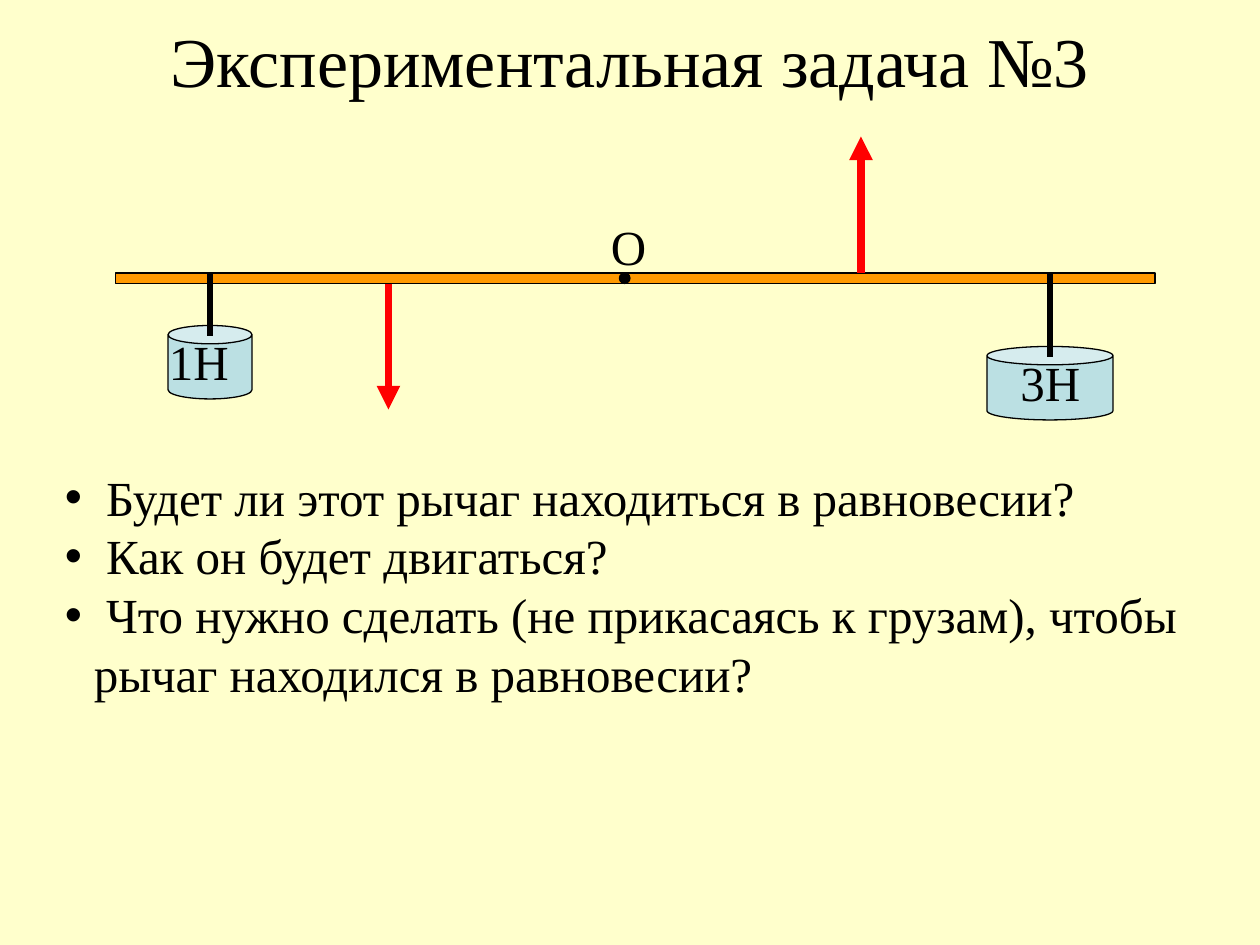
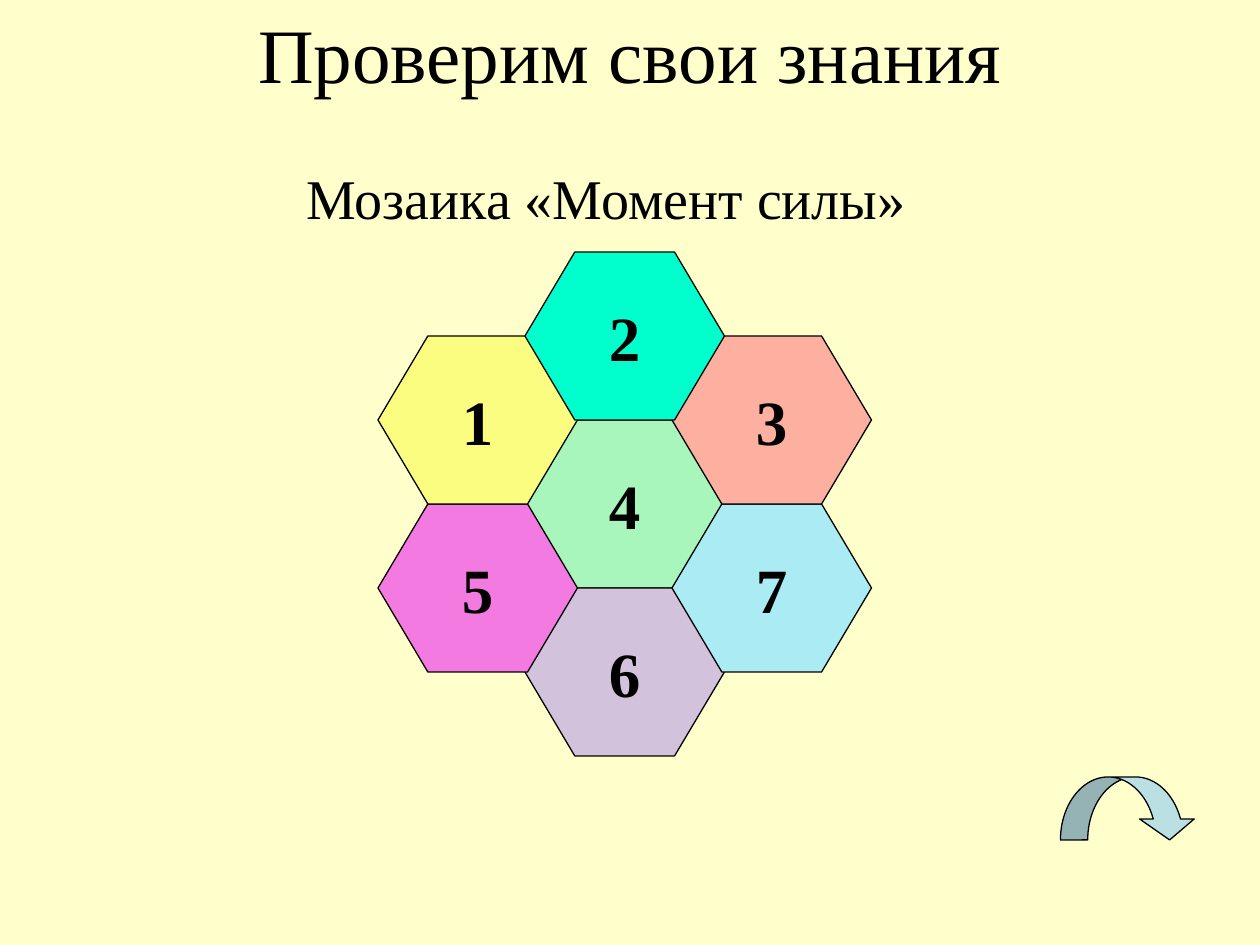
from lxml import etree
from pptx import Presentation
from pptx.dml.color import RGBColor as Rgb
from pptx.enum.shapes import MSO_CONNECTOR as Connector, MSO_SHAPE as Shape
from pptx.enum.text import MSO_ANCHOR as Anchor, MSO_AUTO_SIZE as AutoSize, PP_ALIGN as Align
from pptx.oxml.ns import qn
from pptx.util import Inches, Pt

COLORS = {
    "paper": "FFFFCC", "ink": "000000", "beam": "FF9900", "weight": "BBE0E3", "force": "FF0000",
    "yellow": "FAFD7F", "mint": "00FFCC", "coral": "FEB0A0", "green": "A8F6BB",
    "pink": "F27AE1", "lilac": "D3C2DC", "sky": "AAEBF4",
}
FONT = "Times New Roman"
UNIT = Inches(1) / 12
COLUMNS, ROWS = 120, 90
LABEL_SIZE = 28
HANG = Inches(0.23)


def color(name):
    """Return the named colour of the palette."""
    return Rgb.from_string(COLORS[name])


def grid(*lengths):
    """Turn grid columns and rows into slide lengths."""
    return [round(length * UNIT) for length in lengths]


class Lesson:
    """Holds the shared style and the current slide."""

    def __init__(self):
        """Open a deck with the shared size and background."""
        self.deck = Presentation()
        self.deck.slide_width, self.deck.slide_height = grid(COLUMNS, ROWS)
        fill = self.deck.slide_master.background.fill
        fill.solid()
        fill.fore_color.rgb = color("paper")

    def page(self, title, size, height):
        """Start a slide with a centred title."""
        self.slide = self.deck.slides.add_slide(self.deck.slide_layouts[5])
        box = self.slide.shapes.title
        box.left, box.top, box.width, box.height = grid(6, 0, COLUMNS - 12, height)
        box.text_frame.auto_size = AutoSize.NONE
        box.text_frame.vertical_anchor = Anchor.MIDDLE
        self.add_span(box.text_frame.paragraphs[0], title, size, Align.CENTER)

    def add_span(self, para, words, size, align=Align.LEFT, bold=False):
        """Add one styled run to a paragraph."""
        para.alignment = align
        span = para.add_run()
        span.text = words
        span.font.name, span.font.size, span.font.bold = FONT, Pt(size), bold
        span.font.color.rgb = color("ink")

    def label(self, words, column, row, width, height, size=LABEL_SIZE):
        """Place a single line of text."""
        box = self.slide.shapes.add_textbox(*grid(column, row, width, height))
        box.text_frame.word_wrap = False
        self.add_span(box.text_frame.paragraphs[0], words, size)

    def bullets(self, items, column, row, width, height):
        """Place a bulleted list with a hanging indent."""
        frame = self.slide.shapes.add_textbox(*grid(column, row, width, height)).text_frame
        frame.word_wrap = True
        for index, item in enumerate(items):
            para = frame.add_paragraph() if index else frame.paragraphs[0]
            props = para._p.get_or_add_pPr()
            props.set("marL", str(HANG))
            props.set("indent", str(-HANG))
            etree.SubElement(props, qn("a:buFont"), typeface="Arial")
            etree.SubElement(props, qn("a:buChar"), char="•")
            self.add_span(para, item, LABEL_SIZE)

    def shape(self, kind, fill, column, row, width, height, adjust=()):
        """Place a filled preset shape with a thin outline."""
        box = self.slide.shapes.add_shape(kind, *grid(column, row, width, height))
        box.shadow.inherit = False
        box.fill.solid()
        box.fill.fore_color.rgb = color(fill)
        box.line.color.rgb = color("ink")
        box.line.width = Pt(0.75)
        for index, value in enumerate(adjust):
            box.adjustments[index] = value
        return box

    def tile(self, number, fill, column, row, width, height):
        """Place a numbered hexagon."""
        box = self.shape(Shape.HEXAGON, fill, column, row, width, height, [0.297])
        box.text_frame.word_wrap = False
        box.text_frame.vertical_anchor = Anchor.MIDDLE
        self.add_span(box.text_frame.paragraphs[0], str(number), 36, Align.CENTER, True)

    def upright(self, column, start, end, stroke, width, arrow=False):
        """Draw a vertical line, with an arrowhead on request."""
        line = self.slide.shapes.add_connector(
            Connector.STRAIGHT, *grid(column, start, column, end))
        line.line.color.rgb = color(stroke)
        line.line.width = Pt(width)
        props = line._element.spPr
        if arrow:
            etree.SubElement(props.find(qn("a:ln")), qn("a:tailEnd"), type="triangle")
        etree.SubElement(props, qn("a:effectLst"))


def lever_page(lesson):
    """Build the lever problem."""
    lesson.page("Экспериментальная задача №3", 40, 11.4)
    beam_top, beam_bottom = 26, 27
    lesson.shape(Shape.RECTANGLE, "beam", 11, beam_top, 99, 1)
    lesson.shape(Shape.FLOWCHART_CONNECTOR, "ink", 59, beam_top, 1, 1)
    weights = [("1Н", 20, 31, 8, 32, 14.9), ("3Н", 100, 33, 12, 34, 96)]
    for words, center, top, width, hook, text_left in weights:
        lesson.shape(Shape.CAN, "weight", center - width / 2, top, width, 7, [0.25])
        lesson.upright(center, beam_top, hook, "ink", 3)
        lesson.label(words, text_left, top, 8.2, 6.8)
    lesson.label("О", 57, 20, 5.8, 6.8)
    lesson.bullets([
        " Будет ли этот рычаг находиться в равновесии?",
        " Как он будет двигаться?",
        " Что нужно сделать (не прикасаясь к грузам), чтобы рычаг находился в равновесии?",
    ], 5, 43.9, 115, 23.6)
    for column, start, end in [(37, beam_bottom, 39), (82, beam_top, 13)]:
        lesson.upright(column, start, end, "force", 4.5, arrow=True)


def mosaic_page(lesson):
    """Build the mosaic of numbered hexagons."""
    lesson.page("Проверим свои знания", 44, 10)
    width, height, step = 19, 16, 14
    tiles = [
        (4, "green", 1, 1), (6, "lilac", 1, 2), (7, "sky", 2, 1.5), (5, "pink", 0, 1.5),
        (1, "yellow", 0, 0.5), (3, "coral", 2, 0.5), (2, "mint", 1, 0),
    ]
    for number, fill, across, down in tiles:
        lesson.tile(number, fill, 36 + across * step, 24 + down * height, width, height)
    lesson.label("Мозаика «Момент силы»", 28, 15, 60, 7.6, 32)
    lesson.shape(Shape.CURVED_DOWN_ARROW, "weight", 101, 74, 13, 6, [0.433, 0.867, 0.333])


def main():
    """Build and save the deck."""
    lesson = Lesson()
    lever_page(lesson)
    mosaic_page(lesson)
    lesson.deck.save("out.pptx")


if __name__ == "__main__":
    main()
